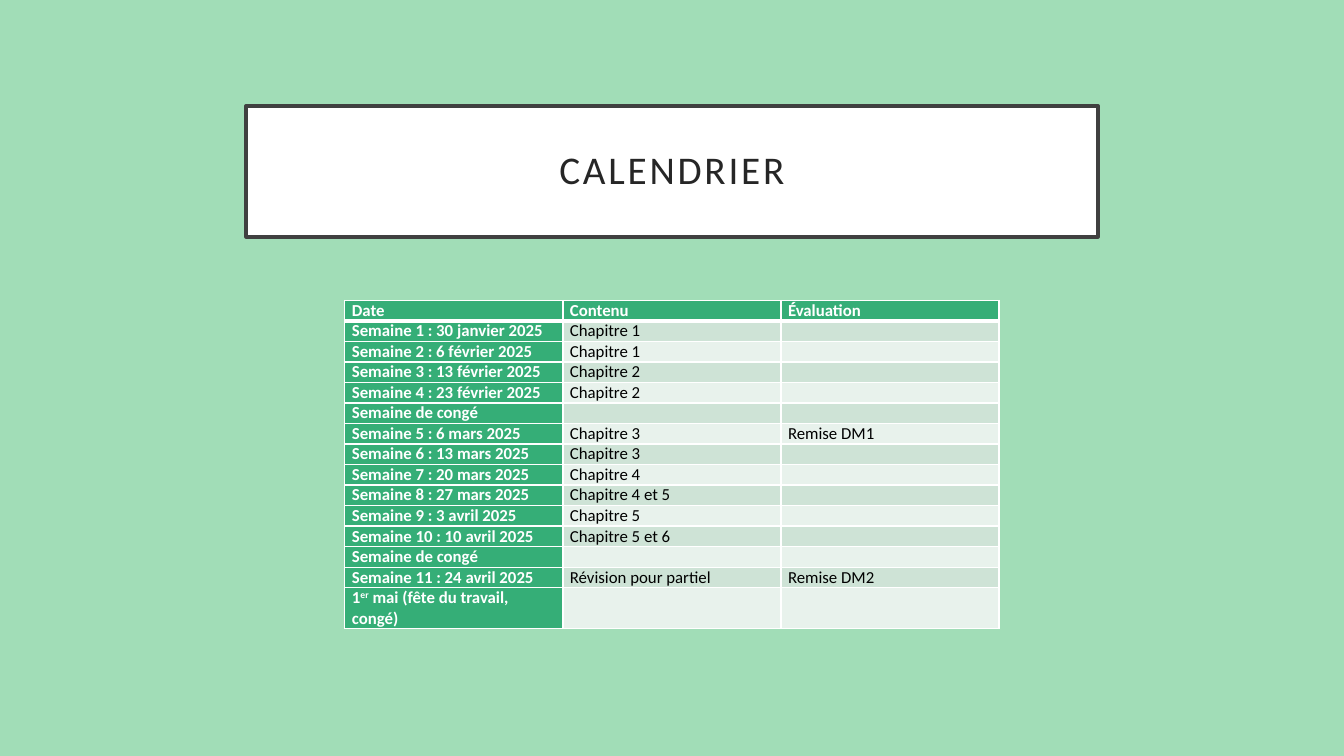
from pptx import Presentation
from pptx.dml.color import RGBColor
from pptx.enum.text import MSO_ANCHOR, MSO_AUTO_SIZE, PP_ALIGN
from pptx.oxml.ns import qn
from pptx.util import Inches, Pt
from lxml.etree import SubElement

MINT = RGBColor(0xA1, 0xDD, 0xB7)
GREEN = RGBColor(0x35, 0xAE, 0x77)
BAND_DARK = RGBColor(0xCE, 0xE3, 0xD6)
BAND_LIGHT = RGBColor(0xE8, 0xF2, 0xEC)
WHITE = RGBColor(0xFF, 0xFF, 0xFF)
BLACK = RGBColor(0, 0, 0)
FRAME = RGBColor(0x40, 0x40, 0x40)
INK = RGBColor(0x26, 0x26, 0x26)
FONT = "Calibri"
SUPER = "^"

CALENDAR = [
    ("Date", "Contenu", "Évaluation"),
    ("Semaine 1 : 30 janvier 2025", "Chapitre 1", ""),
    ("Semaine 2 : 6 février 2025", "Chapitre 1", ""),
    ("Semaine 3 : 13 février 2025", "Chapitre 2", ""),
    ("Semaine 4 : 23 février 2025", "Chapitre 2", ""),
    ("Semaine de congé", "", ""),
    ("Semaine 5 : 6 mars 2025", "Chapitre 3", "Remise DM1"),
    ("Semaine 6 : 13 mars 2025", "Chapitre 3", ""),
    ("Semaine 7 : 20 mars 2025", "Chapitre 4", ""),
    ("Semaine 8 : 27 mars 2025", "Chapitre 4 et 5", ""),
    ("Semaine 9 : 3 avril 2025", "Chapitre 5", ""),
    ("Semaine 10 : 10 avril 2025", "Chapitre 5 et 6", ""),
    ("Semaine de congé", "", ""),
    ("Semaine 11 : 24 avril 2025", "Révision pour partiel", "Remise DM2"),
    ("1^er^ mai (fête du travail, congé)", "", ""),
]


def add_run(p, text, size, color, bold=False):
    r = p.add_run()
    r.text = text
    r.font.name = FONT
    r.font.size = Pt(size)
    r.font.bold = bold
    r.font.color.rgb = color
    return r


def add_title(s, text, left, top, width, height):
    sp = s.shapes.title
    sp.left, sp.top, sp.width, sp.height = map(Inches, (left, top, width, height))
    sp.fill.solid()
    sp.fill.fore_color.rgb = WHITE
    sp.line.color.rgb = FRAME
    sp.line.width = Pt(2.5)
    tf = sp.text_frame
    tf.word_wrap = True
    tf.auto_size = MSO_AUTO_SIZE.NONE
    tf.vertical_anchor = MSO_ANCHOR.MIDDLE
    tf.margin_left = tf.margin_right = tf.margin_top = tf.margin_bottom = Inches(0.2)
    p = tf.paragraphs[0]
    p.alignment = PP_ALIGN.CENTER
    p.line_spacing = 0.9
    r = add_run(p, text, 28, INK)
    r.font._element.set("spc", "200")


def set_borders(cell, row):
    tcPr = cell._tc.get_or_add_tcPr()
    widths = {"L": 1, "R": 1, "T": 3 if row == 1 else 1, "B": 3 if row == 0 else 1}
    for side, width in widths.items():
        ln = SubElement(tcPr, qn(f"a:ln{side}"), w=str(Pt(width)))
        fill = SubElement(ln, qn("a:solidFill"))
        SubElement(fill, qn("a:srgbClr"), val=str(WHITE))


def fill_cell(cell, text, row, col):
    heading = row == 0 or col == 0
    set_borders(cell, row)
    cell.fill.solid()
    cell.fill.fore_color.rgb = GREEN if heading else (BAND_LIGHT, BAND_DARK)[row % 2]
    cell.margin_left = cell.margin_right = Inches(0.07)
    cell.margin_top = cell.margin_bottom = 0
    p = cell.text_frame.paragraphs[0]
    if not text:
        SubElement(p._p, qn("a:endParaRPr"), sz="1200")
        return
    for i, part in enumerate(text.split(SUPER)):
        r = add_run(p, part, 12, WHITE if heading else BLACK, heading)
        if i % 2:
            r.font._element.set("baseline", "30000")


def add_calendar(s, rows, left, top, width, row_height):
    cols = len(rows[0])
    table = s.shapes.add_table(len(rows), cols, Inches(left), Inches(top),
                               Inches(width), Inches(row_height * len(rows))).table
    table.first_col = True
    for i, texts in enumerate(rows):
        table.rows[i].height = Inches(row_height)
        for j, text in enumerate(texts):
            fill_cell(table.cell(i, j), text, i, j)


def main():
    prs = Presentation()
    prs.slide_width, prs.slide_height = Inches(13.33), Inches(7.5)
    s = prs.slides.add_slide(prs.slide_layouts[5])
    s.background.fill.solid()
    s.background.fill.fore_color.rgb = MINT
    add_title(s, "CALENDRIER", 2.44, 1.05, 8.45, 1.3)
    add_calendar(s, CALENDAR, 3.42, 2.98, 6.49, 0.2)
    prs.save("out.pptx")


if __name__ == "__main__":
    main()
